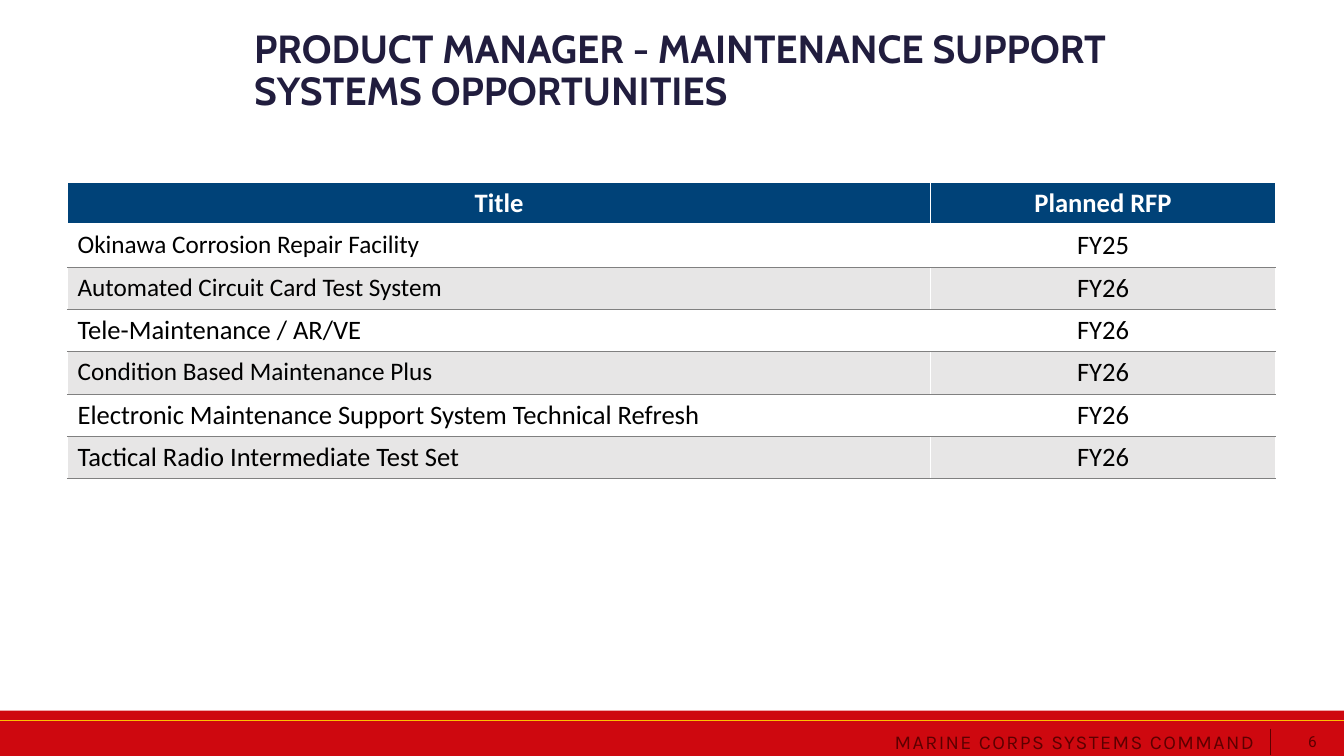
from typing import NamedTuple

from lxml import etree
from pptx import Presentation
from pptx.dml.color import RGBColor
from pptx.enum.shapes import MSO_CONNECTOR, MSO_SHAPE
from pptx.enum.text import MSO_ANCHOR, PP_ALIGN
from pptx.oxml.ns import qn
from pptx.util import Inches, Pt

LEFT, CENTER, RIGHT = PP_ALIGN.LEFT, PP_ALIGN.CENTER, PP_ALIGN.RIGHT
TOP, MIDDLE = MSO_ANCHOR.TOP, MSO_ANCHOR.MIDDLE
STRAIGHT, RECTANGLE = MSO_CONNECTOR.STRAIGHT, MSO_SHAPE.RECTANGLE

WHITE = RGBColor(0xFF, 0xFF, 0xFF)
BLACK = RGBColor(0, 0, 0)
RED = RGBColor(0xCE, 0x08, 0x0F)
GOLD = RGBColor(0xFF, 0xC0, 0x00)
MAROON = RGBColor(0x5C, 0x00, 0x00)
NAVY = RGBColor(0x21, 0x1D, 0x3E)
BLUE = RGBColor(0x00, 0x42, 0x78)
BAND = RGBColor(0xE7, 0xE6, 0xE6)
GRAY = RGBColor(0x80, 0x80, 0x80)


class Rule(NamedTuple):
    x1: float
    y1: float
    x2: float
    y2: float
    color: RGBColor
    width: float


class Label(NamedTuple):
    text: str
    x: float
    y: float
    w: float
    h: float
    font: str
    size: float
    color: RGBColor
    align: PP_ALIGN = LEFT
    anchor: MSO_ANCHOR = TOP
    bold: bool = False
    inset: tuple[float, float] = (0, 0)
    line_spacing: float = 0.9
    tracking: float = 0


class Opportunity(NamedTuple):
    title: str
    rfp: str
    title_size: float = 19


class Border(NamedTuple):
    color: RGBColor
    width: float


RULES = [
    Rule(0, 7.15, 13.33, 7.15, GOLD, 0.5),
    Rule(12.6, 7.23, 12.6, 7.49, MAROON, 0.25),
]
LABELS = [
    Label("6", 12.66, 7.29, 0.4, 0.15, "Roboto", 11, MAROON, RIGHT, MIDDLE),
    Label("MARINE CORPS SYSTEMS COMMAND", 6.8, 7.19, 5.74, 0.34, "Karla", 14, MAROON,
          RIGHT, inset=(0.1, 0.05), line_spacing=1, tracking=1),
    Label("PRODUCT MANAGER - MAINTENANCE SUPPORT SYSTEMS OPPORTUNITIES",
          2.52, 0.29, 10.14, 0.39, "Cabin", 28, NAVY, bold=True),
]
OPPORTUNITIES = [
    Opportunity("Okinawa Corrosion Repair Facility", "FY25", 18),
    Opportunity("Automated Circuit Card Test System", "FY26", 18),
    Opportunity("Tele-Maintenance / AR/VE", "FY26"),
    Opportunity("Condition Based Maintenance Plus", "FY26", 18),
    Opportunity("Electronic Maintenance Support System Technical Refresh", "FY26"),
    Opportunity("Tactical Radio Intermediate Test Set", "FY26"),
]
COL_WIDTHS = [8.56, 3.42]
ROW_HEIGHT = 0.42
THIN_WHITE, THICK_WHITE, HAIRLINE = Border(WHITE, 1), Border(WHITE, 3), Border(GRAY, 0.5)


def style_paragraph(p, font: str, size: float, color: RGBColor, align: PP_ALIGN, bold: bool) -> None:
    p.alignment = align
    for r in p.runs:
        r.font.name, r.font.size, r.font.bold = font, Pt(size), bold
        r.font.color.rgb = color


def add_rule(s, rule: Rule) -> None:
    line = s.shapes.add_connector(STRAIGHT, *map(Inches, rule[:4]))
    line.line.color.rgb = rule.color
    line.line.width = Pt(rule.width)
    etree.SubElement(line.element.spPr, qn("a:effectLst"))


def add_label(s, label: Label) -> None:
    tf = s.shapes.add_textbox(*map(Inches, label[1:5])).text_frame
    tf.word_wrap = True
    tf.vertical_anchor = label.anchor
    tf.margin_left = tf.margin_right = Inches(label.inset[0])
    tf.margin_top = tf.margin_bottom = Inches(label.inset[1])
    tf.text = label.text
    p = tf.paragraphs[0]
    p.line_spacing = label.line_spacing
    style_paragraph(p, label.font, label.size, label.color, label.align, label.bold)
    if label.tracking:
        p.runs[0].font._element.set("spc", str(int(label.tracking * 100)))


def set_borders(cell, top: Border, bottom: Border) -> None:
    tc_pr = cell._tc.get_or_add_tcPr()
    sides = {"lnL": THIN_WHITE, "lnR": THIN_WHITE, "lnT": top, "lnB": bottom}
    for i, (side, border) in enumerate(sides.items()):
        ln = etree.Element(qn(f"a:{side}"), w=str(Pt(border.width)))
        fill = etree.SubElement(ln, qn("a:solidFill"))
        etree.SubElement(fill, qn("a:srgbClr"), val=str(border.color))
        tc_pr.insert(i, ln)


def fill_cell(cell, text: str, size: float, color: RGBColor, align: PP_ALIGN,
              bold: bool, fill: RGBColor, top: Border, bottom: Border) -> None:
    cell.text_frame.text = text
    style_paragraph(cell.text_frame.paragraphs[0], "Calibri", size, color, align, bold)
    cell.fill.solid()
    cell.fill.fore_color.rgb = fill
    set_borders(cell, top, bottom)


def add_opportunities(s) -> None:
    n_rows = len(OPPORTUNITIES) + 1
    table = s.shapes.add_table(n_rows, len(COL_WIDTHS), Inches(0.67), Inches(1.81),
                               Inches(sum(COL_WIDTHS)), Inches(n_rows * ROW_HEIGHT)).table
    for col, width in zip(table.columns, COL_WIDTHS):
        col.width = Inches(width)
    for row in table.rows:
        row.height = Inches(ROW_HEIGHT)

    for c, heading in enumerate(["Title", "Planned RFP"]):
        fill_cell(table.cell(0, c), heading, 19, WHITE, CENTER, True, BLUE, THIN_WHITE, THICK_WHITE)
    for i, item in enumerate(OPPORTUNITIES, start=1):
        fill = WHITE if i % 2 else BAND
        top = THICK_WHITE if i == 1 else HAIRLINE
        fill_cell(table.cell(i, 0), item.title, item.title_size, BLACK, LEFT, False, fill, top, HAIRLINE)
        fill_cell(table.cell(i, 1), item.rfp, 19, BLACK, CENTER, False, fill, top, HAIRLINE)


def main() -> None:
    prs = Presentation()
    prs.slide_width, prs.slide_height = Inches(13.33), Inches(7.5)
    s = prs.slides.add_slide(prs.slide_layouts[6])

    # Footer band
    sp = s.shapes.add_shape(RECTANGLE, Inches(0), Inches(7.05), Inches(13.33), Inches(0.49))
    sp.shadow.inherit = False
    sp.fill.solid()
    sp.fill.fore_color.rgb = RED
    sp.line.fill.background()
    for rule in RULES:
        add_rule(s, rule)

    # Footer text and title
    for label in LABELS:
        add_label(s, label)

    # Table of opportunities
    add_opportunities(s)

    prs.save("out.pptx")


if __name__ == "__main__":
    main()
